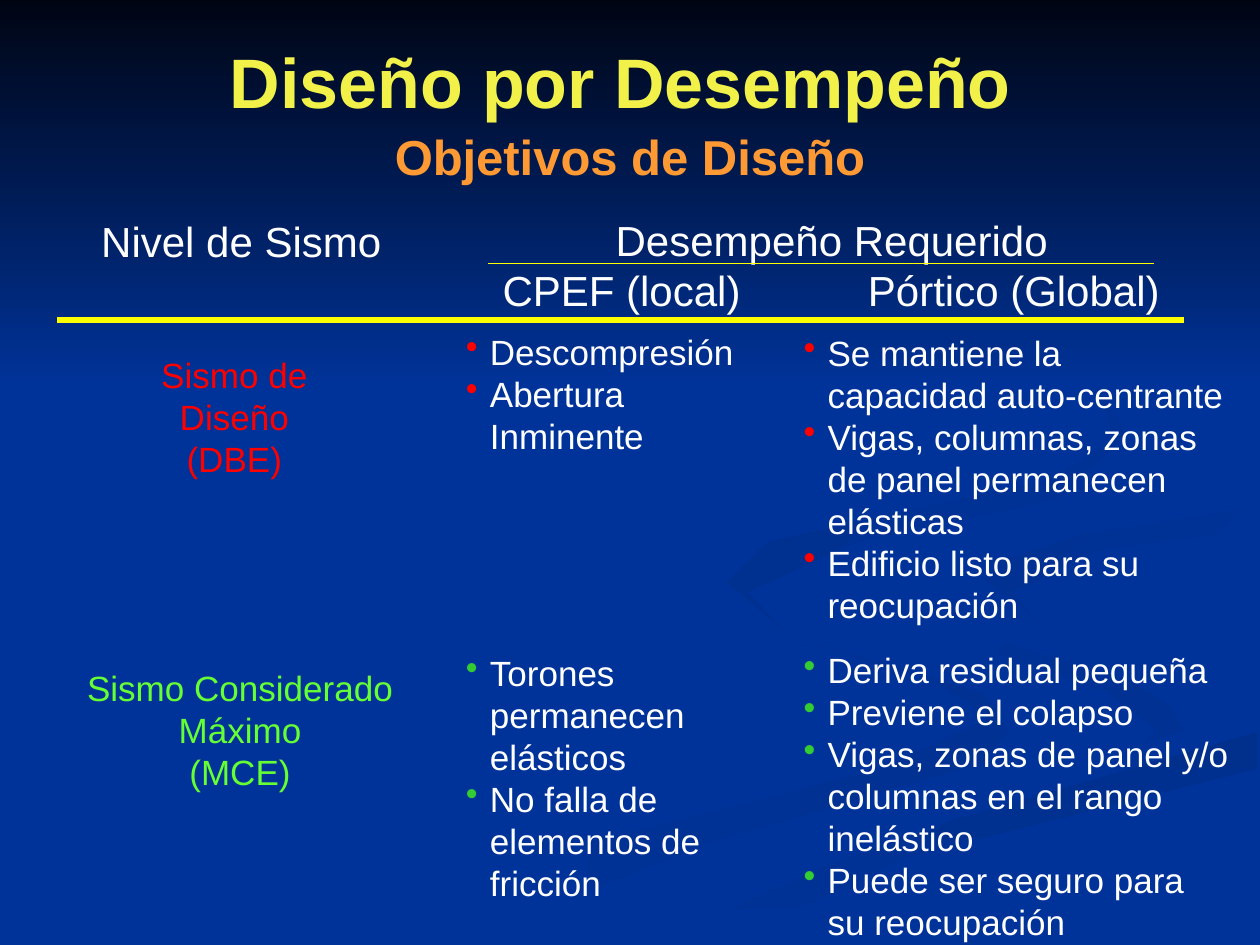
from typing import NamedTuple, Optional

import lxml.etree
import pptx
import pptx.dml.color
import pptx.enum.shapes
import pptx.enum.text
import pptx.oxml.ns
import pptx.util

RGB = pptx.dml.color.RGBColor
ALIGN = pptx.enum.text.PP_ALIGN
qn = pptx.oxml.ns.qn

NAVY = RGB(0x00, 0x33, 0x99)
NIGHT = RGB(0x00, 0x05, 0x14)
SHADE = RGB(0x00, 0x2F, 0x8C)
DUSK = RGB(0x00, 0x31, 0x93)
WHITE = RGB(0xFF, 0xFF, 0xFF)
LEMON = RGB(0xF1, 0xF1, 0x49)
YELLOW = RGB(0xFF, 0xFF, 0x00)
ORANGE = RGB(0xFF, 0x99, 0x33)
RED = RGB(0xFF, 0x00, 0x00)
LIME = RGB(0x66, 0xFF, 0x33)
GREEN = RGB(0x33, 0xCC, 0x33)

# The slide is a grid of 100 columns by 75 rows of square cells.
CELL = pptx.util.Inches(0.1)
COLS, ROWS = 100, 75
INDENT = pptx.util.Inches(0.19)


class Box(NamedTuple):
    col: float
    row: float
    wide: float
    high: float


class Wave(NamedTuple):
    """An outline in cells, with its two end colours and angle."""
    start: RGB
    end: RGB
    angle: int
    points: list[tuple[float, float]]


class Rule(NamedTuple):
    left: float
    right: float
    row: float
    weight: float


class Goal(NamedTuple):
    box: Box
    dot: RGB
    lines: list[str]
    top: float = 0.05


WAVES = [
    Wave(NAVY, DUSK, 0, [
        (78, 55), (61, 50), (57.5, 46), (61, 50), (74, 54), (78.6, 57),
        (70, 61), (46, 67), (30, 75), (36, 75), (56, 67), (78, 60.5),
        (80, 58)]),
    Wave(NAVY, DUSK, 315, [
        (94.3, 57), (89, 53.5), (75, 49), (72.4, 46.4), (75.5, 50.5),
        (88, 55), (91.8, 58), (89.4, 60.5), (94, 58)]),
    Wave(SHADE, NAVY, 270, [
        (50.3, 75), (57, 75), (72, 68), (99.8, 61), (99.8, 58.1), (76, 65),
        (57, 72)]),
    Wave(NAVY, NAVY, 0, [
        (72.5, 46.4), (77.5, 50.3), (92, 54.7), (94, 58), (74, 64), (47.7, 75),
        (52, 75), (70, 66.5), (99.9, 58), (99.9, 53.8), (82, 49.3), (78, 46),
        (86, 42.4), (99.9, 40.2), (99.9, 38.7), (77, 42.7)]),
    Wave(DUSK, NAVY, 315, [
        (78.1, 46), (82.6, 49.6), (80.5, 47), (87, 43.7), (99.8, 42),
        (99.8, 40.2), (86, 42.4), (79.5, 44.5)]),
    Wave(SHADE, NAVY, 315, [
        (68, 43), (84, 39.6), (89.4, 34.5), (85.5, 28.4), (76.2, 23.3),
        (87, 29.9), (88.5, 35), (83, 38.2), (61, 43), (57.7, 46.2),
        (62.2, 50), (59.3, 47)]),
    Wave(NIGHT, NAVY, 270, [(0, 0), (0, 30.8), (COLS, 30.8), (COLS, 0)]),
]

RULES = [Rule(4.5, 94, 25.4, 3), Rule(38.7, 91.6, 20.9, 0.75)]

LOCAL = Box(36, 25.7, 26.7, 14.3)
WORLD = Box(62.8, 25.8, 35.7, 24.3)
GOALS = [
    Goal(LOCAL, RED, ["Descompresión", "Abertura Inminente"]),
    Goal(LOCAL._replace(row=47.9, high=24.3), GREEN, [
        "Torones permanecen elásticos",
        "No falla de elementos de fricción"], top=0.38),
    Goal(WORLD, RED, [
        "Se mantiene la capacidad auto-centrante",
        "Vigas, columnas, zonas de panel permanecen elásticas",
        "Edificio listo para su reocupación"]),
    Goal(WORLD._replace(row=51), GREEN, [
        "Deriva residual pequeña",
        "Previene el colapso",
        "Vigas, zonas de panel y/o columnas en el rango inelástico",
        "Puede ser seguro para su reocupación"]),
]


def cells(count: float) -> int:
    return round(count * CELL)


def add_dot(para, color: RGB) -> None:
    """Give the paragraph a hanging bullet of the colour."""
    props = para._p.get_or_add_pPr()
    props.set("marL", str(INDENT))
    props.set("indent", str(-INDENT))
    tint = lxml.etree.SubElement(props, qn("a:buClr"))
    lxml.etree.SubElement(tint, qn("a:srgbClr"), val=str(color))
    lxml.etree.SubElement(props, qn("a:buChar"), char="•")


def add_tab(para, place: float) -> None:
    stops = lxml.etree.SubElement(para._p.get_or_add_pPr(), qn("a:tabLst"))
    lxml.etree.SubElement(stops, qn("a:tab"), algn="l",
                          pos=str(pptx.util.Inches(place)))


def add_text(slide, box: Box, lines: list[str], *, size: float = 20,
             color: RGB = WHITE, bold: bool = False, align=ALIGN.CENTER,
             dot: Optional[RGB] = None, wrap: bool = False, top: float = 0.05):
    """Add a text box with one paragraph a line and return its frame."""
    frame = slide.shapes.add_textbox(*map(cells, box)).text_frame
    frame.word_wrap = wrap
    frame.margin_top = pptx.util.Inches(top)
    for num, line in enumerate(lines):
        para = frame.add_paragraph() if num else frame.paragraphs[0]
        para.alignment = align
        run = para.add_run()
        run.text = line
        run.font.name = "Arial"
        run.font.size = pptx.util.Pt(size)
        run.font.bold = bold
        run.font.color.rgb = color
        if dot is not None:
            add_dot(para, dot)
    return frame


def add_wave(slide, wave: Wave) -> None:
    first, *rest = [(cells(col), cells(row)) for col, row in wave.points]
    pen = slide.shapes.build_freeform(*first)
    pen.add_line_segments(rest, close=True)
    shape = pen.convert_to_shape()
    shape.shadow.inherit = False
    shape.line.fill.background()
    if wave.start == wave.end:
        shape.fill.solid()
        shape.fill.fore_color.rgb = wave.start
        return
    shape.fill.gradient()
    shape.fill.gradient_angle = wave.angle
    for stop, color in zip(shape.fill.gradient_stops, (wave.start, wave.end)):
        stop.color.rgb = color


def add_rule(slide, rule: Rule) -> None:
    row = cells(rule.row)
    line = slide.shapes.add_connector(
        pptx.enum.shapes.MSO_CONNECTOR.STRAIGHT,
        cells(rule.left), row, cells(rule.right), row)
    line.line.color.rgb = YELLOW
    line.line.width = pptx.util.Pt(rule.weight)
    lxml.etree.SubElement(line._element.spPr, qn("a:effectLst"))


def add_title(slide) -> None:
    frame = add_text(slide, Box(0, 0.5, COLS, 15),
                     ["Diseño por Desempeño ", "Objetivos de Diseño"],
                     size=40, color=LEMON, bold=True, wrap=True, top=0.26)
    para = frame.paragraphs[1]
    para.space_before = pptx.util.Pt(2)
    para.runs[0].font.size = pptx.util.Pt(28)
    para.runs[0].font.color.rgb = ORANGE


def add_heads(slide) -> None:
    frame = add_text(slide, Box(38.9, 16.5, 54.2, 9),
                     ["Desempeño Requerido", "CPEF (local)\tPórtico (Global)"],
                     size=24, wrap=True)
    para = frame.paragraphs[1]
    para.alignment = ALIGN.LEFT
    add_tab(para, 2.9)
    add_text(slide, Box(7, 16.6, 24.3, 5), ["Nivel de Sismo"], size=24)


def main() -> None:
    deck = pptx.Presentation()
    deck.slide_width, deck.slide_height = cells(COLS), cells(ROWS)
    slide = deck.slides.add_slide(deck.slide_layouts[6])
    slide.background.fill.solid()
    slide.background.fill.fore_color.rgb = NAVY
    for wave in WAVES:
        add_wave(slide, wave)
    add_text(slide, Box(7.1, 27.6, 23, 7.7), ["Sismo de Diseño", "(DBE)"],
             color=RED)
    add_text(slide, Box(5.9, 52.4, 26.3, 11),
             ["Sismo Considerado", "Máximo", "(MCE)"], color=LIME)
    for goal in GOALS:
        add_text(slide, goal.box, goal.lines, align=ALIGN.LEFT, dot=goal.dot,
                 wrap=True, top=goal.top)
    add_heads(slide)
    for rule in RULES:
        add_rule(slide, rule)
    add_title(slide)
    deck.save("out.pptx")


if __name__ == "__main__":
    main()
